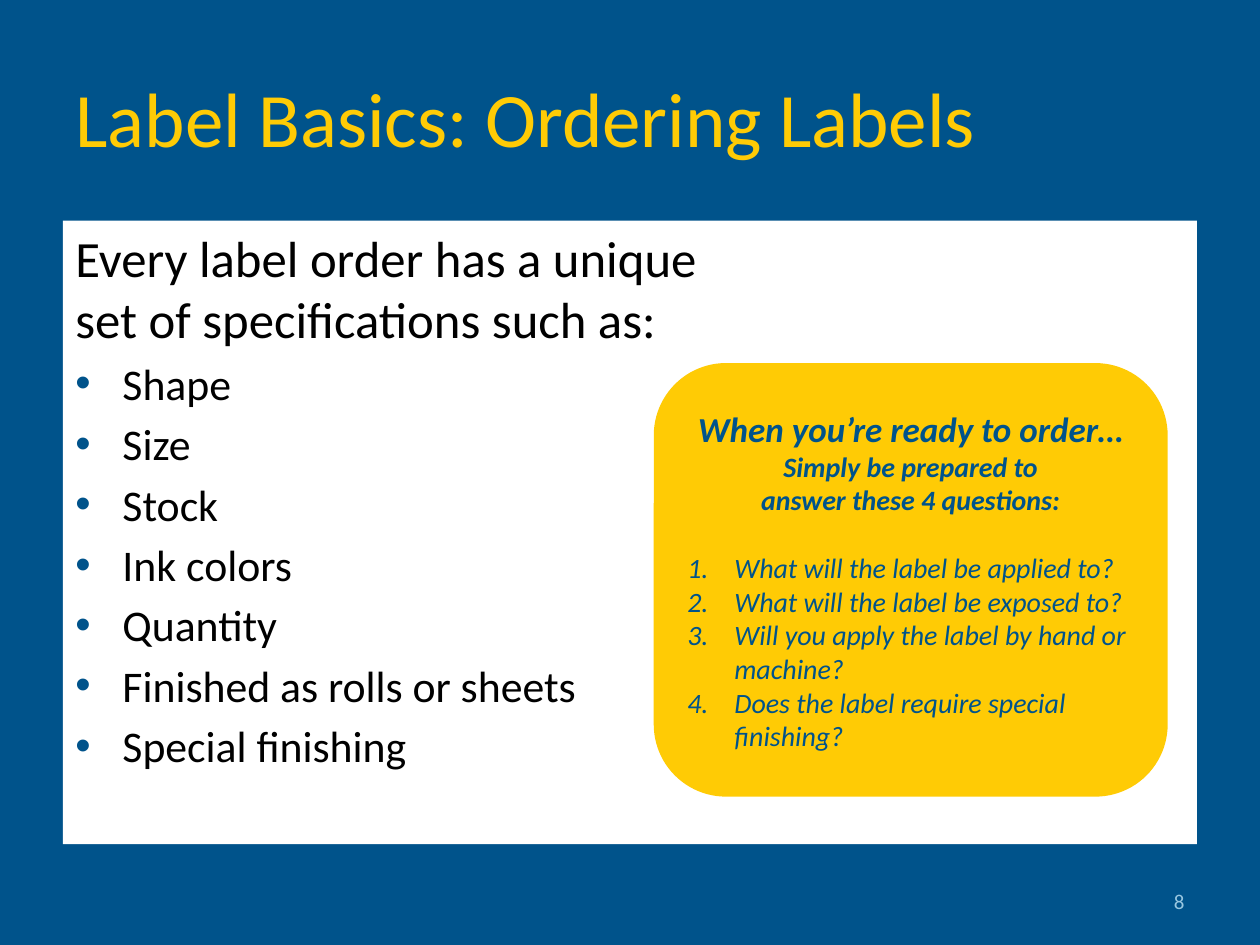
"""Build the slide on ordering labels with its specification list and question card."""
from lxml.etree import SubElement
from pptx import Presentation
from pptx.dml.color import RGBColor
from pptx.enum.shapes import MSO_SHAPE
from pptx.enum.text import MSO_ANCHOR, PP_ALIGN
from pptx.oxml.ns import qn
from pptx.util import Cm, Pt

BLUE = RGBColor(0x00, 0x53, 0x8B)
YELLOW = RGBColor(0xFF, 0xCB, 0x05)
WHITE = RGBColor(0xFF, 0xFF, 0xFF)
BLACK = RGBColor(0x00, 0x00, 0x00)
PALE = RGBColor(0x99, 0xC7, 0xE0)
INDENT = Cm(0.95)


def write(p, text, size, color, align=PP_ALIGN.LEFT, before=0, **style):
    p.text = text
    p.alignment = align
    p.space_before = Pt(before)
    values = {"name": "Calibri", "size": Pt(size), **style}
    for r in p.runs:
        for key, value in values.items():
            setattr(r.font, key, value)
        r.font.color.rgb = color


def add_bullet(p, tag, **attrs):
    pPr = p._p.get_or_add_pPr()
    pPr.set("marL", str(INDENT))
    pPr.set("indent", str(-INDENT))
    clr = SubElement(pPr, qn("a:buClr"))
    SubElement(clr, qn("a:srgbClr"), val=str(BLUE))
    SubElement(pPr, qn("a:buFont"), typeface="Arial" if tag == "a:buChar" else "+mj-lt")
    SubElement(pPr, qn(tag), **attrs)


prs = Presentation()
prs.slide_width, prs.slide_height = Cm(25.4), Cm(19.05)
s = prs.slides.add_slide(prs.slide_layouts[5])
s.background.fill.solid()
s.background.fill.fore_color.rgb = BLUE

title = s.shapes.title
title.left, title.top, title.width, title.height = Cm(1.27), Cm(0.76), Cm(22.86), Cm(3.18)
title.text_frame.vertical_anchor = MSO_ANCHOR.MIDDLE
write(title.text_frame.paragraphs[0], "Label Basics: Ordering Labels", 44, YELLOW)

frames = []
for kind, box, color, anchor in [
    (MSO_SHAPE.RECTANGLE, (1.27, 4.45, 22.86, 12.57), WHITE, MSO_ANCHOR.TOP),
    (MSO_SHAPE.ROUNDED_RECTANGLE, (13.18, 7.32, 10.36, 8.74), YELLOW, MSO_ANCHOR.MIDDLE),
]:
    sp = s.shapes.add_shape(kind, *map(Cm, box))
    sp.shadow.inherit = False
    sp.fill.solid()
    sp.fill.fore_color.rgb = color
    sp.line.fill.background()
    sp.text_frame.word_wrap = True
    sp.text_frame.vertical_anchor = anchor
    frames.append(sp.text_frame)
specs, card = frames

write(specs.paragraphs[0], "Every label order has a unique\nset of specifications such as:", 29, BLACK)
for item in ["Shape", "Size", "Stock", "Ink colors", "Quantity",
             "Finished as rolls or sheets", "Special finishing"]:
    p = specs.add_paragraph()
    add_bullet(p, "a:buChar", char="•")
    write(p, item, 25, BLACK, before=4.5)

write(card.paragraphs[0], "When you’re ready to order…", 20, BLUE,
      PP_ALIGN.CENTER, bold=True, italic=True)
write(card.add_paragraph(), "Simply be prepared to\nanswer these 4 questions:", 16, BLUE,
      PP_ALIGN.CENTER, bold=True, italic=True)
for i, question in enumerate([
    "What will the label be applied to?",
    "What will the label be exposed to?",
    "Will you apply the label by hand or machine?",
    "Does the label require special finishing?",
]):
    p = card.add_paragraph()
    add_bullet(p, "a:buAutoNum", type="arabicPeriod")
    write(p, question, 16, BLUE, before=0 if i else 19.5, italic=True)

tf = s.shapes.add_textbox(Cm(18.21), Cm(17.65), Cm(5.92), Cm(1.02)).text_frame
tf.word_wrap = True
tf.vertical_anchor = MSO_ANCHOR.MIDDLE
write(tf.paragraphs[0], "8", 12, PALE, PP_ALIGN.RIGHT)

prs.save("out.pptx")
